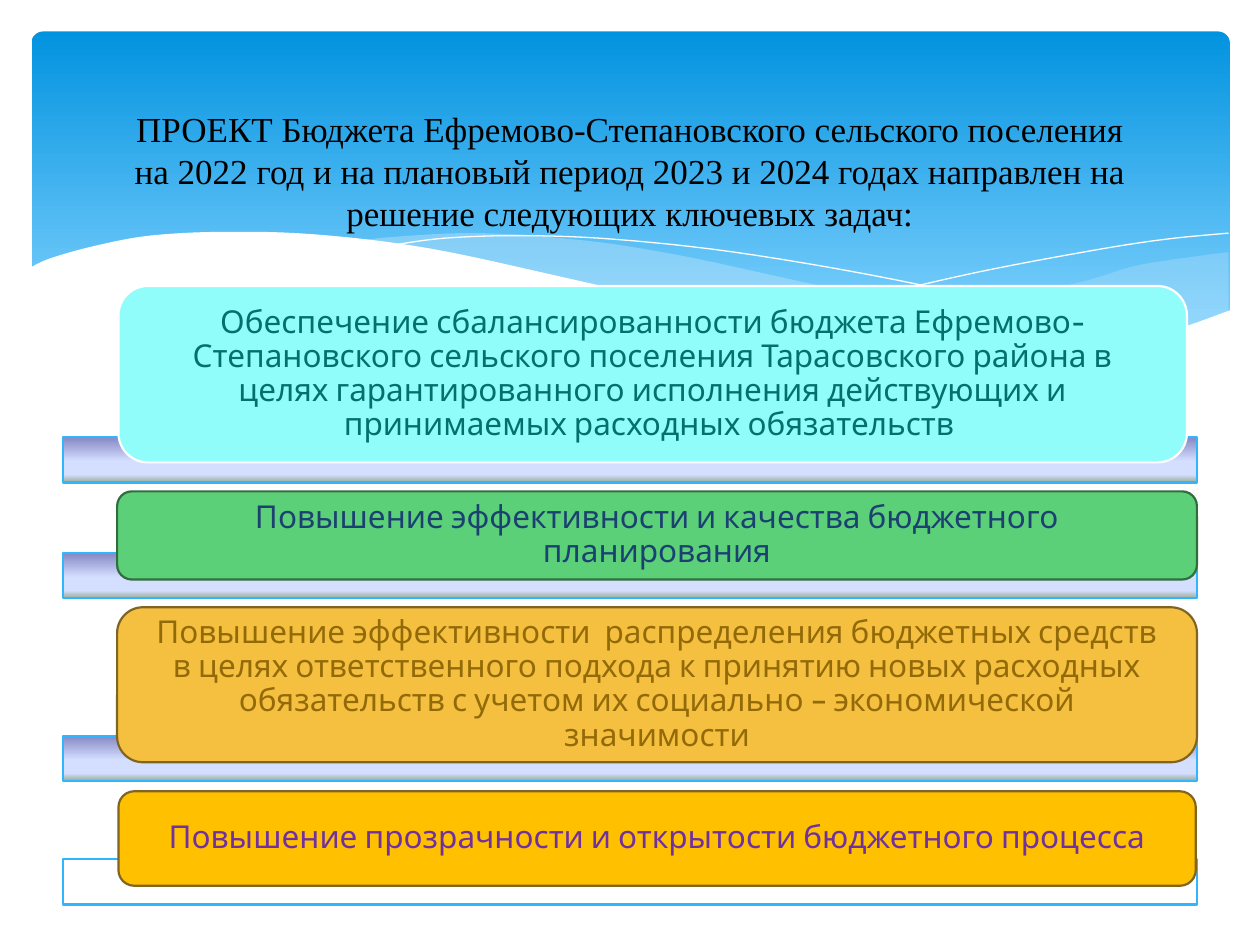
from lxml.etree import SubElement
from pptx import Presentation
from pptx.dml.color import RGBColor
from pptx.enum.shapes import MSO_SHAPE
from pptx.enum.text import MSO_ANCHOR, PP_ALIGN
from pptx.oxml.ns import qn
from pptx.util import Inches, Pt

COLORS = {
    "sky_top": "0293E0", "sky_bottom": "83D3FE", "wave": "C6E7FC", "white": "FFFFFF",
    "title": "000000", "bar_line": "31B6FD",
    "aqua": "91FDFA", "aqua_text": "03706E",
    "green": "5BD078", "green_line": "306D3F", "green_text": "1B4171",
    "sand": "F5C040", "brown_line": "806421", "sand_text": "936A08",
    "amber": "FFC000", "violet_text": "7030A0",
    "bar_top": "8488C4", "bar_middle": "D4DEFF", "bar_bottom": "96AB94",
}
SKY = [(0, "sky_top"), (90, "sky_bottom")]
BAR = [(0, "bar_top"), (53, "bar_middle"), (83, "bar_middle"), (100, "bar_bottom")]

RIGHT_WAVE = [
    [(9.5, 1.75), (8.81, 1.85), (8.36, 1.98), (7.54, 2.17), (6.36, 2.4)],
    [(6.36, 2.4), (7.07, 2.49), (7.78, 2.53), (8.38, 2.5), (8.96, 2.4), (9.5, 2.22)],
]
MIDDLE_WAVE = [
    [(8.68, 2.48), (7.5, 2.29), (6.04, 1.97), (5.16, 1.78), (4.4, 1.66),
     (3.55, 1.6), (2.88, 1.63), (2.61, 1.66)],
    [(2.61, 1.66), (3.37, 1.78), (4.24, 1.97), (5.41, 2.23), (6.4, 2.41),
     (7.23, 2.51), (7.93, 2.53), (8.68, 2.48)],
]
FALLING_LINE = [(2.84, 1.7), (3.28, 1.64), (3.91, 1.62), (4.64, 1.65),
                (5.57, 1.75), (6.7, 1.94), (7.7, 2.16), (8.82, 2.47)]
RISING_LINE = [(5.88, 2.32), (6.7, 2.1), (7.51, 1.91), (8.41, 1.74), (8.99, 1.65), (9.5, 1.6)]
WHITE_WAVE = [(9.52, 2.21), (8.95, 2.4), (8.25, 2.5), (7.53, 2.51), (6.63, 2.43),
              (5.54, 2.25), (4.22, 1.95), (3.15, 1.72), (2.25, 1.61), (1.52, 1.59),
              (0.94, 1.62), (0.51, 1.7), (0.15, 1.8), (-0.02, 1.88)]
WHITE_BASE = [(-0.02, 3.04), (9.52, 3.04)]

TITLE = [
    "ПРОЕКТ Бюджета Ефремово-Степановского сельского поселения",
    "на 2022 год и на плановый период 2023 и 2024 годах направлен на решение "
    "следующих ключевых задач:",
]
GOALS = [
    ("Обеспечение сбалансированности бюджета Ефремово-Степановского сельского поселения "
     "Тарасовского района в целях гарантированного исполнения действующих и принимаемых "
     "расходных обязательств ",
     (0.44, 0, 8.48, 1.4), 1.2, BAR, ("aqua", "white", "aqua_text")),
    ("Повышение эффективности и качества бюджетного планирования",
     (0.43, 1.63, 8.57, 0.7), 2.12, BAR, ("green", "green_line", "green_text")),
    ("Повышение эффективности  распределения бюджетных средств в целях ответственного "
     "подхода к принятию новых расходных обязательств с учетом их социально – "
     "экономической значимости",
     (0.43, 2.55, 8.57, 1.23), 3.57, BAR, ("sand", "brown_line", "sand_text")),
    ("Повышение прозрачности и открытости бюджетного процесса",
     (0.44, 4.01, 8.55, 0.75), 4.55, None, ("amber", "brown_line", "violet_text")),
]


def color(name):
    """Return the named colour."""
    return RGBColor.from_string(COLORS[name])


def paint(shape, fill=None, line=None, width=1.25, alpha=None):
    """Set fill, outline and opacity of a shape and drop its shadow."""
    shape.shadow.inherit = False
    if fill:
        shape.fill.solid()
        shape.fill.fore_color.rgb = color(fill)
        if alpha:
            srgb = shape.fill._xPr.find(qn("a:solidFill"))[0]
            SubElement(srgb, qn("a:alpha"), val=str(alpha * 1000))
    else:
        shape.fill.background()
    if line:
        shape.line.color.rgb = color(line)
        shape.line.width = Pt(width)
    else:
        shape.line.fill.background()


def shade(shape, stops):
    """Fill a shape with a gradient running from top to bottom."""
    shape.fill.gradient()
    shape.fill.gradient_angle = 270
    stop_list = shape.fill._xPr.find(qn("a:gradFill")).find(qn("a:gsLst"))
    for old_stop in list(stop_list):
        stop_list.remove(old_stop)
    for position, name in stops:
        stop = SubElement(stop_list, qn("a:gs"), pos=str(position * 1000))
        SubElement(stop, qn("a:srgbClr"), val=COLORS[name])


def smooth(knots, steps=6):
    """Return points of a Catmull-Rom curve through the knots."""
    padded = [knots[0], *knots, knots[-1]]
    points = [knots[0]]
    for a, b, c, d in zip(padded, padded[1:], padded[2:], padded[3:]):
        for t in (step / steps for step in range(1, steps + 1)):
            points.append(tuple(
                (2 * q + (r - p) * t + (2 * p - 5 * q + 4 * r - s) * t ** 2
                 + (3 * q - p - 3 * r + s) * t ** 3) / 2
                for p, q, r, s in zip(a, b, c, d)))
    return points


def add_wave(slide, left, top, points, closed=True):
    """Draw points given relative to the left and top of the header."""
    placed = [(Inches(left + x), Inches(top + y)) for x, y in points]
    builder = slide.shapes.build_freeform(*placed[0])
    builder.add_line_segments(placed[1:], close=closed)
    return builder.convert_to_shape()


def add_header(slide, left, top, width, height):
    """Draw the blue header with its waves."""
    sky = slide.shapes.add_shape(MSO_SHAPE.ROUNDED_RECTANGLE, Inches(left), Inches(top),
                                 Inches(width), Inches(height))
    sky.adjustments[0] = 0.034
    paint(sky)
    shade(sky, SKY)
    for (upper, lower), alpha in ((RIGHT_WAVE, 29), (MIDDLE_WAVE, 40)):
        paint(add_wave(slide, left, top, smooth(upper) + smooth(lower)), "wave", alpha=alpha)
    for knots in (FALLING_LINE, RISING_LINE):
        paint(add_wave(slide, left, top, smooth(knots), False), line="white", width=0)
    paint(add_wave(slide, left, top, smooth(WHITE_WAVE) + WHITE_BASE), "white")


def add_run(paragraph, text, size, font, ink):
    """Add a styled run to a paragraph."""
    run = paragraph.add_run()
    run.text = text
    run.font.size = Pt(size)
    run.font.name = font
    run.font.color.rgb = color(ink)


def add_title(slide, left, top, width, height):
    """Write the centred title."""
    frame = slide.shapes.add_textbox(Inches(left), Inches(top), Inches(width),
                                     Inches(height)).text_frame
    frame.word_wrap = True
    frame.vertical_anchor = MSO_ANCHOR.MIDDLE
    frame.margin_bottom = Inches(0.38)
    heading = frame.paragraphs[0]
    heading.alignment = PP_ALIGN.CENTER
    for index, text in enumerate(TITLE):
        if index:
            heading.add_line_break()
        add_run(heading, text, 20, "Times New Roman", "title")


def add_goals(slide, left, top, width):
    """Draw each goal card over its bar."""
    for text, (x, y, card_width, card_height), bar_y, stops, (fill, line, ink) in GOALS:
        bar = slide.shapes.add_shape(MSO_SHAPE.RECTANGLE, Inches(left), Inches(top + bar_y),
                                     Inches(width), Inches(0.36))
        paint(bar, "white", "bar_line")
        if stops:
            shade(bar, stops)
        card = slide.shapes.add_shape(MSO_SHAPE.ROUNDED_RECTANGLE, Inches(left + x),
                                      Inches(top + y), Inches(card_width), Inches(card_height))
        paint(card, fill, line)
        frame = card.text_frame
        frame.word_wrap = True
        frame.vertical_anchor = MSO_ANCHOR.MIDDLE
        frame.margin_left = frame.margin_right = Inches(0.24)
        frame.margin_top = frame.margin_bottom = 0
        goal = frame.paragraphs[0]
        goal.alignment = PP_ALIGN.CENTER
        goal.line_spacing = 0.9
        add_run(goal, text, 18, "Cabin", ink)


def main():
    """Build and save the slide."""
    presentation = Presentation()
    presentation.slide_width = Inches(10)
    presentation.slide_height = Inches(7.5)
    slide = presentation.slides.add_slide(presentation.slide_layouts[6])
    add_header(slide, 0.25, 0.25, 9.51, 2.7)
    add_goals(slide, 0.5, 2.27, 9)
    add_title(slide, 0.5, 0.78, 9, 1.48)
    presentation.save("out.pptx")


if __name__ == "__main__":
    main()
